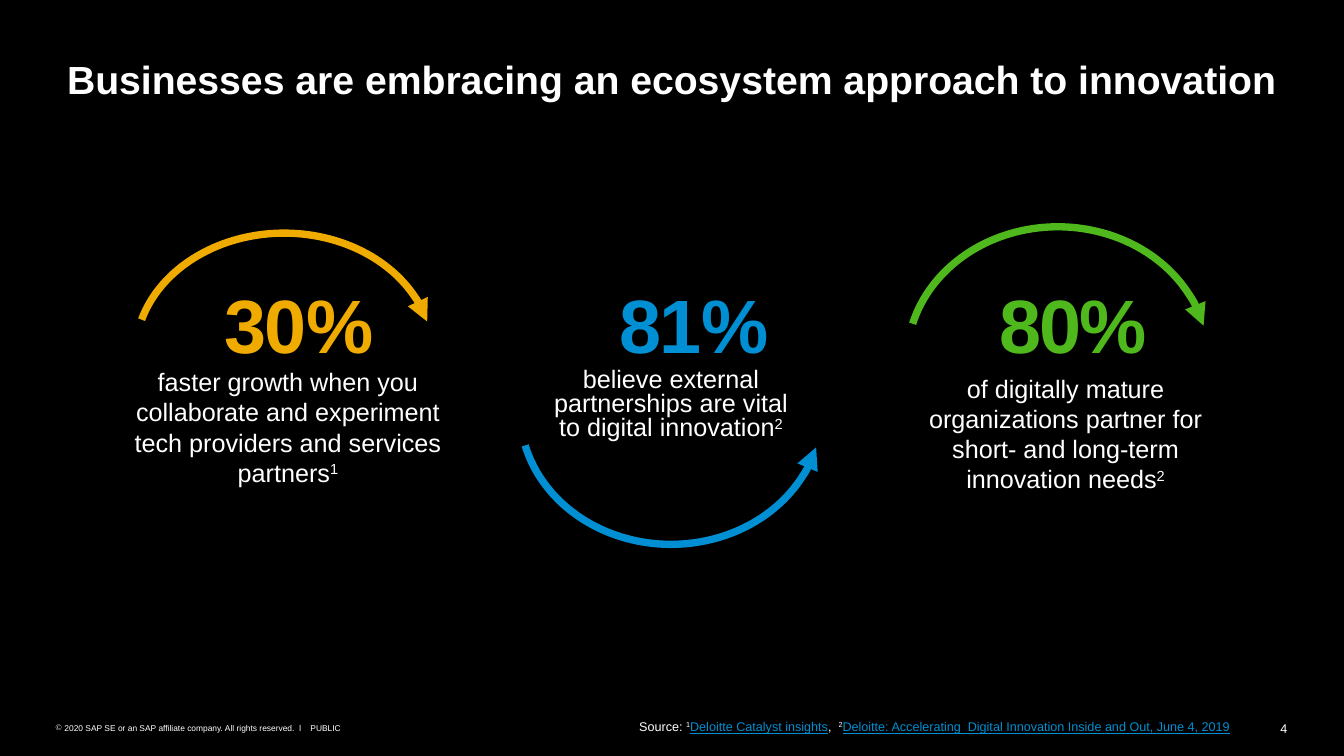
from dataclasses import dataclass

from lxml import etree
from pptx import Presentation
from pptx import util as u
from pptx.dml.color import RGBColor
from pptx.enum import shapes, text
from pptx.oxml.ns import qn

WIDTH, HEIGHT = 13.34, 7.5
FONT = "Arial"
COLORS = {"black": "000000", "white": "FFFFFF", "gold": "F0AB00",
          "blue": "008FD3", "green": "4FB81C"}
CENTER, RIGHT = text.PP_ALIGN.CENTER, text.PP_ALIGN.RIGHT


@dataclass
class Box:
    left: float
    top: float
    width: float
    height: float

    def inner(self, left, top, width, height):
        """Return an inner box given as shares of this one."""
        return Box(self.left + left * self.width, self.top + top * self.height,
                   width * self.width, height * self.height)

    def centered(self, shift, top, width, height):
        """Return an inner box whose middle is shifted from this box's middle."""
        return self.inner(0.5 + shift - width / 2, top, width, height)

    def emu(self):
        return [u.Inches(n) for n in (self.left, self.top, self.width, self.height)]


@dataclass
class Stat:
    number: str
    caption: str
    note: str
    color: str
    arc: tuple             # top, width, height as shares of the column
    caption_place: tuple   # shift, top, width as shares of the column
    number_shift: float
    below: bool = False
    tight_percent: bool = False
    line_spacing: float = None


STATS = [
    Stat("30", "faster growth when you collaborate and experiment tech providers "
         "and services partners", "1", "gold", (0.02, 0.77, 0.77),
         (0.01, 0.44, 0.81), 0.04),
    Stat("81", "believe external partnerships are vital to digital innovation", "2",
         "blue", (0.16, 0.78, 0.84), (0, 0.45, 0.65), 0.06,
         below=True, line_spacing=17.2),
    Stat("80", "of digitally mature organizations partner for short- and long-term "
         "innovation needs", "2", "green", (0, 0.78, 0.84), (0.02, 0.46, 0.86), 0.04,
         tight_percent=True),
]


def rgb(name):
    return RGBColor.from_string(COLORS[name])


def add_run(paragraph, words, size, color="white", bold=False, underline=False,
            raised=False, spacing=None):
    run = paragraph.add_run()
    run.text = words
    font = run.font
    font.name, font.size, font.bold = FONT, u.Pt(size), bold
    font.underline = underline
    font.color.rgb = rgb(color)
    properties = run._r.get_or_add_rPr()
    if raised:
        properties.set("baseline", "30000")
    if spacing:
        properties.set("spc", str(int(spacing * 100)))


def prepare(frame, align=None):
    """Clear the frame's margins and return its first paragraph."""
    frame.margin_left = frame.margin_top = frame.margin_right = frame.margin_bottom = 0
    frame.word_wrap = True
    frame.auto_size = text.MSO_AUTO_SIZE.NONE
    frame.vertical_anchor = text.MSO_ANCHOR.TOP
    paragraph = frame.paragraphs[0]
    paragraph.alignment = align
    return paragraph


def add_text(slide, box, align=None):
    return prepare(slide.shapes.add_textbox(*box.emu()).text_frame, align)


def add_title(slide, box):
    title = slide.shapes.title
    title.left, title.top, title.width, title.height = box.emu()
    add_run(prepare(title.text_frame, CENTER),
            "Businesses are embracing an ecosystem approach to innovation", 28, bold=True)


def add_arc(slide, box, color, below):
    """Draw a curved arrow that points right, above or below the text."""
    arc = slide.shapes.add_shape(shapes.MSO_SHAPE.ARC, *box.emu())
    arc.adjustments[0], arc.adjustments[1] = 116.438, 208.025
    arc.rotation = 180 if below else 0
    arc.shadow.inherit = False
    arc.fill.background()
    arc.line.color.rgb = rgb(color)
    arc.line.width = u.Pt(5.25)
    end = "a:headEnd" if below else "a:tailEnd"
    etree.SubElement(arc.line._get_or_add_ln(), qn(end), type="triangle")


def add_stat(slide, box, stat):
    number = add_text(slide, box.centered(stat.number_shift, 0.195, 0.56, 0.26), CENTER)
    number.line_spacing = 0.9
    add_run(number, stat.number, 54, stat.color, bold=True, spacing=-1.5)
    add_run(number, "%", 54, stat.color, bold=True,
            spacing=-1.5 if stat.tight_percent else None)

    shift, top, width = stat.caption_place
    caption = add_text(slide, box.centered(shift, top, width, 0.37), CENTER)
    if stat.line_spacing:
        caption.line_spacing = u.Pt(stat.line_spacing)
    add_run(caption, stat.caption, 18)
    add_run(caption, stat.note, 18, raised=True)

    add_arc(slide, box.centered(0, *stat.arc), stat.color, stat.below)


def add_footer(slide, box):
    rights = add_text(slide, box.inner(0, 0.27, 0.2, 0.67))
    properties = rights._p.get_or_add_pPr()
    properties.set("marL", str(u.Inches(0.09)))
    properties.set("indent", str(u.Inches(-0.09)))
    bullet_color = etree.SubElement(properties, qn("a:buClr"))
    etree.SubElement(bullet_color, qn("a:srgbClr"), val=COLORS["white"])
    etree.SubElement(properties, qn("a:buChar"), char="©")
    add_run(rights, "2020 SAP SE or an SAP affiliate company. All rights reserved.  ǀ", 6)
    add_run(add_text(slide, box.inner(0.207, 0.27, 0.03, 0.67)), "PUBLIC", 6)

    source = add_text(slide, box.inner(0.283, 0, 0.67, 1), RIGHT)
    add_run(source, "Source: ", 9)
    add_run(source, "1", 9, raised=True)
    add_run(source, "Deloitte Catalyst insights", 9, "blue", underline=True)
    add_run(source, ", \u00a0", 9)
    add_run(source, "2", 9, raised=True)
    add_run(source, "Deloitte: Accelerating\u00a0 Digital Innovation Inside and Out, "
            "June\u00a04,\u00a02019", 9, "blue", underline=True)

    add_run(add_text(slide, box.inner(0.97, 0.13, 0.03, 1), RIGHT), "4", 9)


def main():
    deck = Presentation()
    deck.slide_width, deck.slide_height = u.Inches(WIDTH), u.Inches(HEIGHT)
    slide = deck.slides.add_slide(deck.slide_layouts[5])
    slide.background.fill.solid()
    slide.background.fill.fore_color.rgb = rgb("black")

    page = Box(0.55, 0, 12.23, HEIGHT)
    add_title(slide, page.inner(0, 0.073, 1, 0.063))
    columns = Box(0.9, 0.3 * HEIGHT, 11.52, 0.42 * HEIGHT)
    share = 1 / len(STATS)
    for index, stat in enumerate(STATS):
        add_stat(slide, columns.inner(index * share, 0, share, 1), stat)
    add_footer(slide, page.inner(0, 0.951, 1, 0.02))
    deck.save("out.pptx")


if __name__ == "__main__":
    main()
